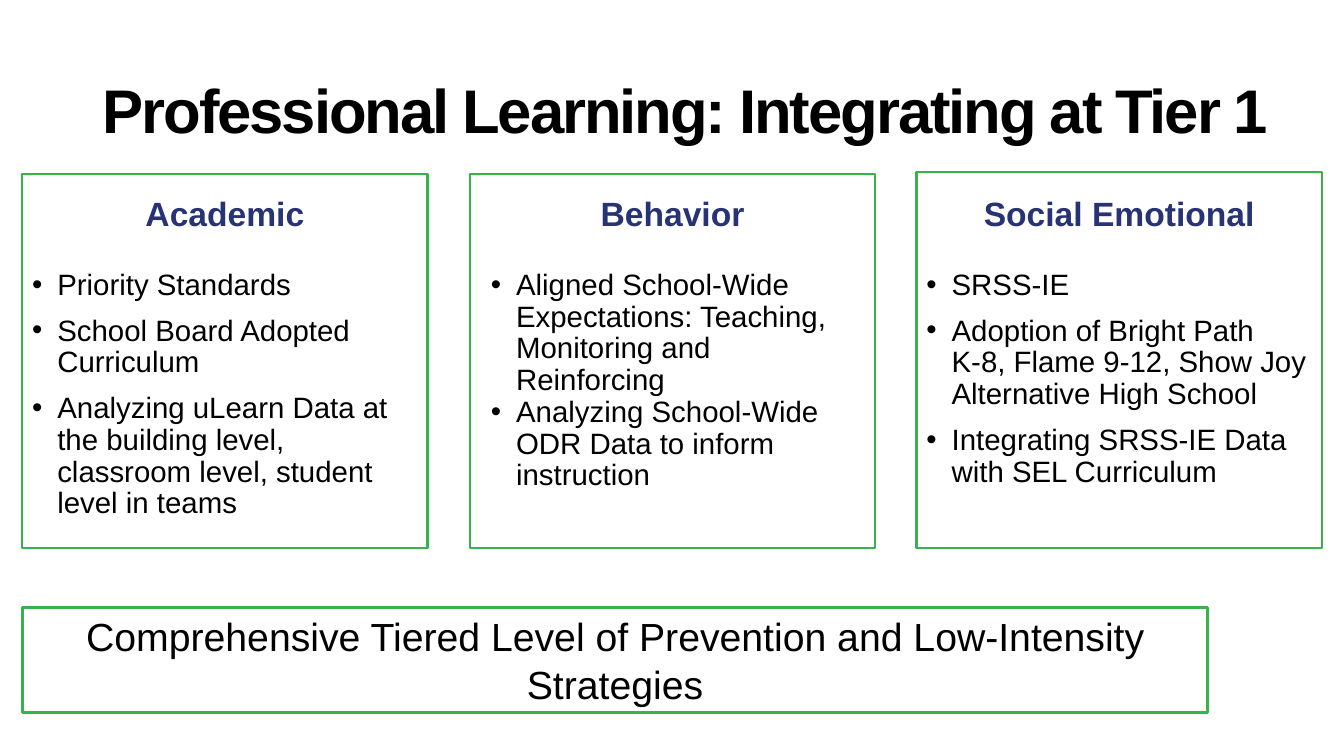
from pptx import Presentation
from pptx.dml.color import RGBColor
from pptx.enum.shapes import MSO_SHAPE as Shape
from pptx.enum.text import MSO_ANCHOR as Anchor, PP_ALIGN as Align
from pptx.oxml.ns import qn
from pptx.util import Pt
from lxml import etree

EMU_PER_PX = 9144  # 100 px to the inch
BLACK, WHITE, NAVY, GREEN = "000000", "FFFFFF", "283375", "37B34A"


def px(length):
    return length * EMU_PER_PX


def color(value):
    return RGBColor.from_string(value)


class SlideBuilder:
    font_name = "Arial"
    bullet_indent = 25

    def __init__(self, slide):
        self.slide = slide

    def box(self, bounds, fill=None, line=None, line_width=1.5):
        shape = self.slide.shapes.add_shape(Shape.RECTANGLE, *map(px, bounds))
        shape.shadow.inherit = False
        if fill:
            shape.fill.solid()
            shape.fill.fore_color.rgb = color(fill)
        else:
            shape.fill.background()
        if line:
            shape.line.color.rgb = color(line)
            shape.line.width = Pt(line_width)
        else:
            shape.line.fill.background()
        return shape

    def text_box(self, bounds):
        return self.slide.shapes.add_textbox(*map(px, bounds))

    def add_text(self, shape, texts, size, anchor=Anchor.TOP, bold=False,
                 text_color=BLACK, bullets=False, gap=0, tracking=0, **paragraph_format):
        """Fill a shape with one paragraph per text; gap and tracking are in points."""
        frame = shape.text_frame
        frame.word_wrap = True
        frame.vertical_anchor = anchor
        for index, text in enumerate(texts):
            paragraph = frame.paragraphs[0] if index == 0 else frame.add_paragraph()
            for name, value in paragraph_format.items():
                setattr(paragraph, name, value)
            paragraph.space_before = Pt(gap if index else 0)
            if bullets:
                self.add_bullet(paragraph)
            run = paragraph.add_run()
            run.text = text
            font_format = {"name": self.font_name, "size": Pt(size), "bold": bold}
            for name, value in font_format.items():
                setattr(run.font, name, value)
            run.font.color.rgb = color(text_color)
            if tracking:
                run._r.get_or_add_rPr().set("spc", str(round(tracking * 100)))

    def add_bullet(self, paragraph):
        properties = paragraph._p.get_or_add_pPr()
        properties.set("marL", str(px(self.bullet_indent)))
        properties.set("indent", str(-px(self.bullet_indent)))
        etree.SubElement(properties, qn("a:buFont")).set("typeface", self.font_name)
        etree.SubElement(properties, qn("a:buChar")).set("char", "•")


# heading, body bounds, space between bullets, frame top, bullets
COLUMN_LEFTS = (22, 466, 909)
COLUMN_WIDTH = 402
FRAME_BOTTOM = 544
COLUMNS = [
    ("Academic", (22, 263, 402, 403), 10, 173, [
        "Priority Standards",
        "School Board Adopted Curriculum",
        "Analyzing uLearn Data at the building level, classroom level, "
        "student level in teams",
    ]),
    ("Behavior", (477, 263, 391, 460), 0, 173, [
        "Aligned School-Wide Expectations: Teaching, Monitoring and Reinforcing",
        "Analyzing School-Wide ODR Data to inform instruction",
    ]),
    ("Social Emotional", (909, 263, 402, 337), 10, 171, [
        "SRSS-IE",
        "Adoption of Bright Path K-8, Flame 9-12, Show Joy Alternative High School",
        "Integrating SRSS-IE Data with SEL Curriculum",
    ]),
]


def main():
    presentation = Presentation()
    presentation.slide_width, presentation.slide_height = px(1333), px(750)
    builder = SlideBuilder(presentation.slides.add_slide(presentation.slide_layouts[6]))

    title = builder.text_box((92, 40, 1205, 145))
    builder.add_text(title, ["Professional Learning: Integrating at Tier 1"], 44,
                     anchor=Anchor.MIDDLE, bold=True, tracking=-1.5, line_spacing=0.9)

    for left, (heading, bounds, gap, frame_top, bullets) in zip(COLUMN_LEFTS, COLUMNS):
        header = builder.text_box((left, 147, COLUMN_WIDTH, 90))
        builder.add_text(header, [heading], 24, anchor=Anchor.BOTTOM, bold=True,
                         text_color=NAVY, alignment=Align.CENTER, line_spacing=0.9)
        body = builder.box(bounds, fill=WHITE)
        builder.add_text(body, bullets, 21, bullets=True, gap=gap,
                         alignment=Align.LEFT, line_spacing=0.9)
        builder.box((left, frame_top, COLUMN_WIDTH, FRAME_BOTTOM - frame_top), line=GREEN)

    banner = builder.box((22, 603, 1176, 104), line=GREEN, line_width=2.25)
    builder.add_text(
        banner,
        ["Comprehensive Tiered Level of Prevention and Low-Intensity Strategies"],
        28, alignment=Align.CENTER)

    presentation.save("out.pptx")


if __name__ == "__main__":
    main()
